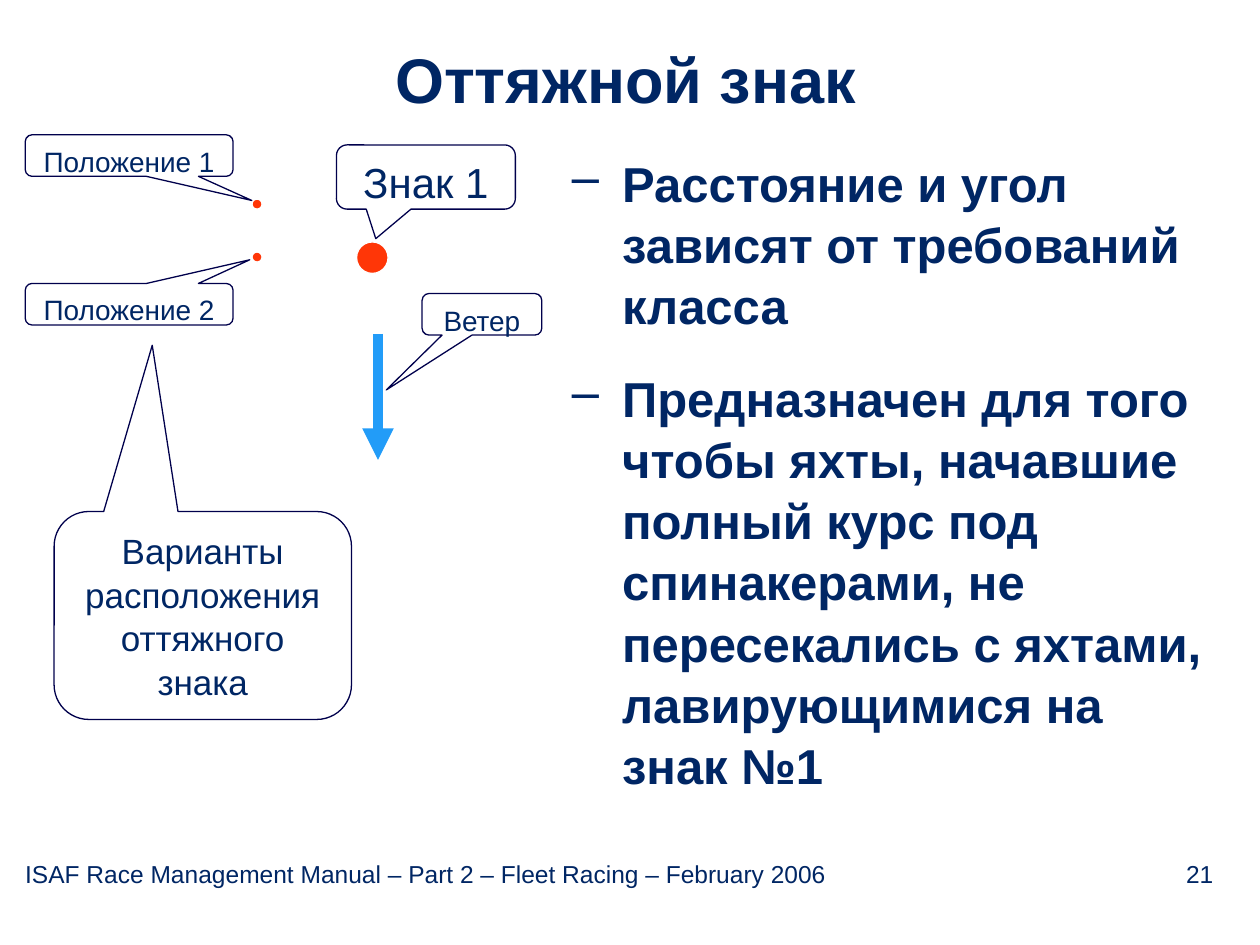
from lxml import etree
from pptx import Presentation
from pptx.dml.color import RGBColor
from pptx.enum.shapes import MSO_CONNECTOR, MSO_SHAPE as Shape
from pptx.enum.text import MSO_ANCHOR as Anchor, PP_ALIGN as Align
from pptx.oxml.ns import qn
from pptx.util import Inches, Pt

NAVY = RGBColor(0x00, 0x26, 0x64)
OUTLINE = RGBColor(0x00, 0x00, 0x4C)
RED = RGBColor(0xFF, 0x36, 0x07)
BLUE = RGBColor(0x22, 0x9C, 0xF8)
WHITE = RGBColor(0xFF, 0xFF, 0xFF)


def write(frame, *texts, size, bold=False, align=Align.LEFT, anchor=Anchor.TOP,
          gap=0, spacing=1.04, bullet=None, right_tab=None):
    frame.word_wrap = True
    frame.vertical_anchor = anchor
    for i, text in enumerate(texts):
        para = frame.paragraphs[0] if i == 0 else frame.add_paragraph()
        props = para._p.get_or_add_pPr()
        para.alignment = align
        para.line_spacing = spacing
        para.space_before = Pt(gap if i else 0)
        if bullet:
            props.set("marL", str(Inches(0.78)))
            props.set("indent", str(Inches(-0.4)))
            etree.SubElement(props, qn("a:buChar"), char=bullet)
        if right_tab:
            tabs = etree.SubElement(props, qn("a:tabLst"))
            etree.SubElement(tabs, qn("a:tab"), pos=str(right_tab), algn="r")
        run = para.add_run()
        run.text = text
        run.font.name = "Arial"
        run.font.size = Pt(size)
        run.font.bold = bold
        run.font.color.rgb = NAVY


prs = Presentation()
prs.slide_width, prs.slide_height = Inches(10), Inches(7.5)
slide = prs.slides.add_slide(prs.slide_layouts[6])
shapes = slide.shapes

# Footer with page number
footer = shapes.add_textbox(Inches(0.2), Inches(6.82), Inches(9.61), Inches(0.23)).text_frame
footer.margin_left = footer.margin_right = footer.margin_top = footer.margin_bottom = 0
write(footer, "ISAF Race Management Manual – Part 2 – Fleet Racing – February 2006\t21",
      size=14, spacing=1.0, right_tab=Inches(9.43))

# Title
title = shapes.add_textbox(Inches(0.24), Inches(0.26), Inches(9.45), Inches(0.7))
write(title.text_frame, "Оттяжной знак", size=36, bold=True,
      align=Align.CENTER, anchor=Anchor.MIDDLE)

# Explanation
body = shapes.add_textbox(Inches(4.06), Inches(1.15), Inches(5.63), Inches(5.07))
write(body.text_frame,
      "Расстояние и угол зависят от требований класса",
      "Предназначен для того чтобы яхты, начавшие полный курс под спинакерами, "
      "не пересекались с яхтами, лавирующимися на знак №1",
      size=28, bold=True, gap=18, bullet="–")

# Marks on the course
for x, y, diameter in [(2.83, 1.92, 0.25), (2, 1.58, 0.08), (2, 2, 0.08)]:
    mark = shapes.add_shape(Shape.OVAL, Inches(x), Inches(y), Inches(diameter), Inches(diameter))
    mark.shadow.inherit = False
    mark.fill.solid()
    mark.fill.fore_color.rgb = RED
    mark.line.color.rgb = WHITE
    mark.line.width = Pt(0.75)

# Wind arrow
wind = shapes.add_connector(MSO_CONNECTOR.STRAIGHT, Inches(3), Inches(2.65), Inches(3), Inches(3.65))
wind.line.color.rgb = BLUE
wind.line.width = Pt(6)
etree.SubElement(wind.line._get_or_add_ln(), qn("a:tailEnd"), type="triangle")
etree.SubElement(wind._element.spPr, qn("a:effectLst"))

# Callouts: text, size, box, pointer tip relative to the box centre
callouts = [
    ("Знак 1", 24, (2.67, 1.15, 1.42, 0.51), (-0.28, 0.96)),
    ("Варианты расположения оттяжного знака", 20, (0.43, 4.06, 2.36, 1.65), (-0.17, -1.3)),
    ("Положение 1", 16, (0.2, 1.07, 1.65, 0.33), (0.59, 1.08)),
    ("Положение 2", 16, (0.2, 2.25, 1.65, 0.33), (0.58, -1.07)),
    ("Ветер", 16, (3.35, 2.33, 0.95, 0.33), (-0.8, 1.82)),
]
for text, size, box, tip in callouts:
    callout = shapes.add_shape(Shape.ROUNDED_RECTANGULAR_CALLOUT, *map(Inches, box))
    callout.adjustments[0], callout.adjustments[1] = tip
    callout.shadow.inherit = False
    callout.fill.background()
    callout.line.color.rgb = OUTLINE
    callout.line.width = Pt(0.75)
    write(callout.text_frame, text, size=size, align=Align.CENTER)

prs.save("out.pptx")
